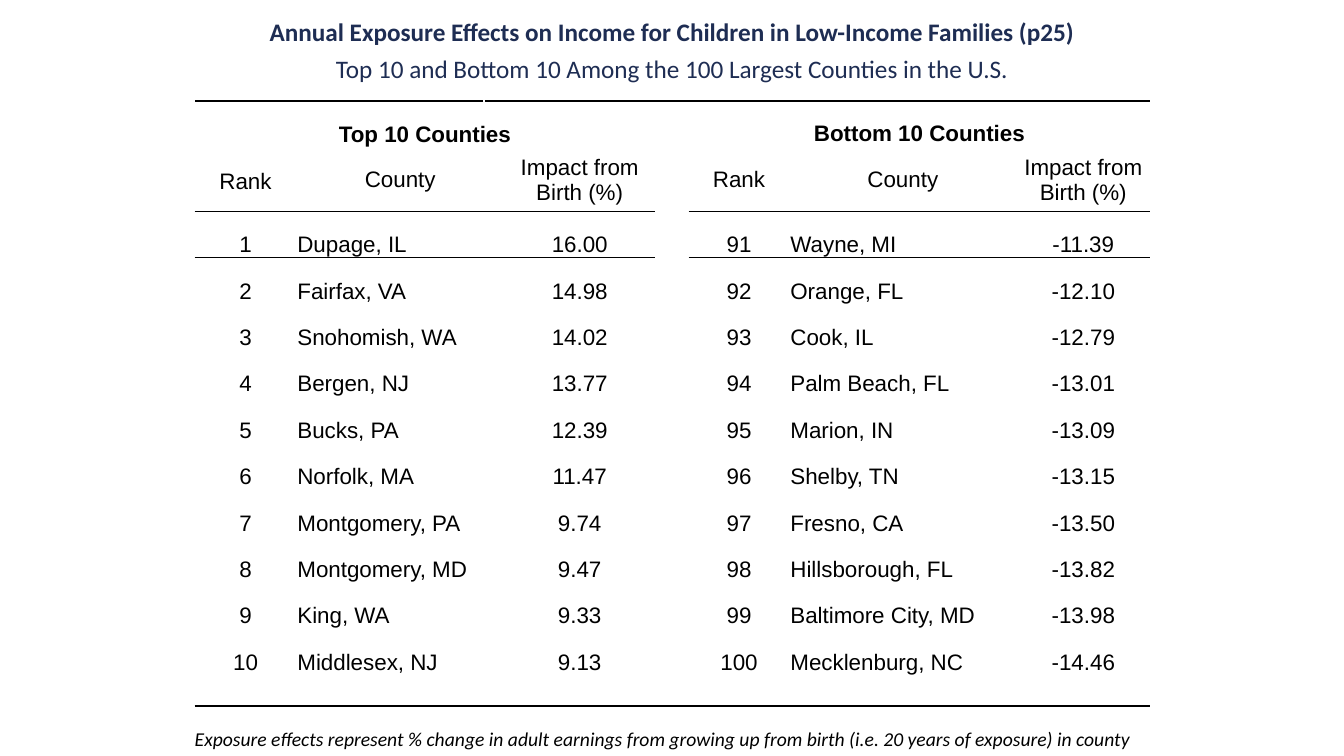
from lxml.etree import SubElement
from pptx import Presentation
from pptx.dml.color import RGBColor
from pptx.enum.text import MSO_ANCHOR, MSO_AUTO_SIZE, PP_ALIGN
from pptx.oxml.ns import qn
from pptx.util import Inches, Pt

COLORS = {"navy": "1E2D53", "ink": "000000", "paper": "FFFFFF"}
UNIT = Inches(1) / 6  # the page grid is 80 columns by 45 rows
NO_STYLE = "{2D5ABB26-0587-4C30-8999-92F81FD0307C}"

# Table grid in inches
COLUMN_WIDTHS = [1.01, 1.86, 0.2, 1.5, 0.33, 1, 2.25, 1.33]
ROW_HEIGHTS = [0.17, 0.3, 0.62] + [0.46] * 10 + [0.31]
TOP_ROW, TITLE_ROW, HEAD_ROW, FIRST_ROW = range(4)
LAST_ROW = len(ROW_HEIGHTS) - 1
HEAD_INSETS = (0.06, 0, 0.06, 0)
BODY_INSETS = (0.01, 0.01, 0.01, 0)
HEADINGS = ["Rank", "County", "Impact from Birth (%)"]

TOP_COUNTIES = [
    ("Dupage, IL", "16.00"), ("Fairfax, VA", "14.98"),
    ("Snohomish, WA", "14.02"), ("Bergen, NJ", "13.77"),
    ("Bucks, PA", "12.39"), ("Norfolk, MA", "11.47"),
    ("Montgomery, PA", "9.74"), ("Montgomery, MD", "9.47"),
    ("King, WA", "9.33"), ("Middlesex, NJ", "9.13"),
]
BOTTOM_COUNTIES = [
    ("Wayne, MI", "-11.39"), ("Orange, FL", "-12.10"),
    ("Cook, IL", "-12.79"), ("Palm Beach, FL", "-13.01"),
    ("Marion, IN", "-13.09"), ("Shelby, TN", "-13.15"),
    ("Fresno, CA", "-13.50"), ("Hillsborough, FL", "-13.82"),
    ("Baltimore City, MD", "-13.98"), ("Mecklenburg, NC", "-14.46"),
]
# Title, table columns, first rank, counties, line spacing of title and rank heading
HALVES = [
    ("Top 10 Counties", (0, 1, 3), 1, TOP_COUNTIES, 1.15),
    ("Bottom 10 Counties", (5, 6, 7), 91, BOTTOM_COUNTIES, 1),
]


def write(frame, text, *, size=16, font="Arial", color="ink", bold=False,
          italic=False, align=PP_ALIGN.CENTER, spacing=1):
    para = frame.paragraphs[0]
    para.alignment = align
    if spacing != 1:
        para.line_spacing = spacing
    span = para.add_run()
    span.text = text
    span.font.size, span.font.name = Pt(size), font
    span.font.bold, span.font.italic = bold, italic
    span.font.color.rgb = RGBColor.from_string(COLORS[color])


def add_text(page, text, left, top, width, height, inset=0.0, **style):
    box = page.shapes.add_textbox(*(round(UNIT * n) for n in (left, top, width, height)))
    frame = box.text_frame
    frame.word_wrap = True
    frame.auto_size = MSO_AUTO_SIZE.SHAPE_TO_FIT_TEXT
    frame.margin_left = frame.margin_right = Inches(inset)
    frame.margin_top = frame.margin_bottom = Inches(inset / 2)
    write(frame, text, font="Calibri", **style)


def add_border(cell, side, color, width):
    line = SubElement(cell._tc.get_or_add_tcPr(), qn(f"a:ln{side}"), w=str(Pt(width)))
    fill = SubElement(line, qn("a:solidFill"))
    SubElement(fill, qn("a:srgbClr"), val=COLORS[color])


def cell_borders(row, column):
    """List the (side, color, width) rules of one cell, in schema order."""
    if row == TOP_ROW:
        return [("L", "paper", 1), ("R", "paper", 1), ("T", "ink", 1.5)]
    if row == LAST_ROW:
        return [("B", "ink", 1.5)]
    if row in (HEAD_ROW, FIRST_ROW) and column != 4:
        return [("B" if row == HEAD_ROW else "T", "ink", 1)]
    return []


def set_insets(cell, insets):
    (cell.margin_left, cell.margin_top,
     cell.margin_right, cell.margin_bottom) = map(Inches, insets)


def fill_cell(table, row, column, text, **style):
    cell = table.cell(row, column)
    body = row >= FIRST_ROW
    set_insets(cell, BODY_INSETS if body else HEAD_INSETS)
    cell.vertical_anchor = MSO_ANCHOR.BOTTOM if body else MSO_ANCHOR.MIDDLE
    write(cell.text_frame, text, **style)


def add_table_grid(page):
    left, top = Inches(1.93), Inches(1)
    table = page.shapes.add_table(
        len(ROW_HEIGHTS), len(COLUMN_WIDTHS), left, top,
        Inches(sum(COLUMN_WIDTHS)), Inches(sum(ROW_HEIGHTS))).table
    table.first_row = table.horz_banding = False
    table._tbl.tblPr.find(qn("a:tableStyleId")).text = NO_STYLE
    for column, width in zip(table.columns, COLUMN_WIDTHS):
        column.width = Inches(width)
    for row, height in zip(table.rows, ROW_HEIGHTS):
        row.height = Inches(height)

    # Merged cells
    spans = [(TOP_ROW, 0, 1), (TOP_ROW, 2, 7), (TITLE_ROW, 0, 3), (TITLE_ROW, 5, 7)]
    spans += [(row, 1, 2) for row in range(HEAD_ROW, LAST_ROW + 1)]
    for row, first, last in spans:
        table.cell(row, first).merge(table.cell(row, last))

    # Rules and fills; small type keeps empty cells from stretching a row
    for row in range(len(ROW_HEIGHTS)):
        for column in range(len(COLUMN_WIDTHS)):
            cell = table.cell(row, column)
            set_insets(cell, (0, 0, 0, 0))
            for border in cell_borders(row, column):
                add_border(cell, *border)
            cell.fill.solid()
            cell.fill.fore_color.rgb = RGBColor.from_string(COLORS["paper"])
    for row in range(len(ROW_HEIGHTS)):
        for column in range(len(COLUMN_WIDTHS)):
            para = table.cell(row, column).text_frame.paragraphs[0]
            SubElement(para._p, qn("a:endParaRPr"), sz="800")
    return table


def fill_half(table, title, columns, first_rank, counties, spacing):
    fill_cell(table, TITLE_ROW, columns[0], title, bold=True, spacing=spacing)
    for column, heading in zip(columns, HEADINGS):
        fill_cell(table, HEAD_ROW, column, heading,
                  spacing=spacing if heading == "Rank" else 1)
    for index, (county, impact) in enumerate(counties):
        row = FIRST_ROW + index
        rank_column, county_column, impact_column = columns
        fill_cell(table, row, rank_column, str(first_rank + index))
        fill_cell(table, row, county_column, county, align=PP_ALIGN.LEFT)
        fill_cell(table, row, impact_column, impact)


def main():
    deck = Presentation()
    deck.slide_width, deck.slide_height = Inches(13.33), Inches(7.5)
    page = deck.slides.add_slide(deck.slide_layouts[6])

    # Headline
    add_text(page, "Annual Exposure Effects on Income for Children in Low-Income Families (p25)",
             10, 1, 60, 1.8, size=18, color="navy", bold=True)
    add_text(page, "Top 10 and Bottom 10 Among the 100 Largest Counties in the U.S.",
             10, 3.2, 60, 1.8, size=18, color="navy")

    # Footnote
    add_text(page, "Exposure effects represent % change in adult earnings from growing up "
             "from birth (i.e. 20 years of exposure) in county",
             11, 43, 57.5, 3.66, inset=0.1, size=14, italic=True, align=PP_ALIGN.LEFT)

    # County ranking
    table = add_table_grid(page)
    for half in HALVES:
        fill_half(table, *half)

    deck.save("out.pptx")


if __name__ == "__main__":
    main()
